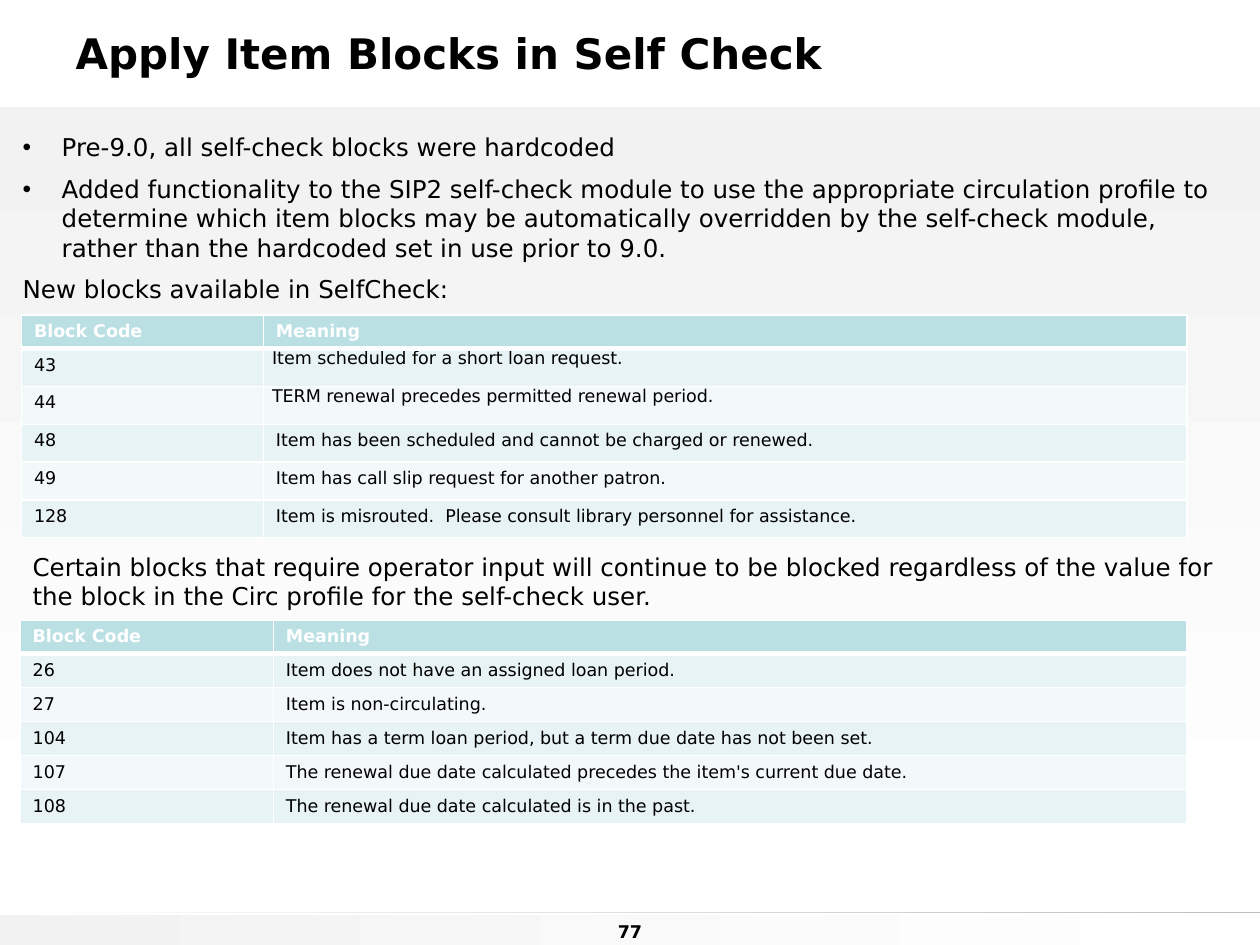
"""Build the slide on item blocks in self check, with two block code tables."""
import pptx
import pptx.dml.color
import pptx.enum.shapes
import pptx.enum.text
import pptx.oxml
import pptx.oxml.ns
import pptx.oxml.xmlchemy
import pptx.util

Inches, Pt = pptx.util.Inches, pptx.util.Pt
MSO_ANCHOR = pptx.enum.text.MSO_ANCHOR
PP_ALIGN = pptx.enum.text.PP_ALIGN
W, H = Inches(10), Inches(7.5)


def rgb(value):
    return pptx.dml.color.RGBColor.from_string(value)


def style(p, size, bold=False, color="000000", before=0):
    p.space_before = Pt(before)
    for r in p.runs:
        r.font.name, r.font.size, r.font.bold = "DejaVu Sans", Pt(size), bold
        r.font.color.rgb = rgb(color)


prs = pptx.Presentation()
prs.slide_width, prs.slide_height = W, H
s = prs.slides.add_slide(prs.slide_layouts[1])
s.background.fill.solid()
s.background.fill.fore_color.rgb = rgb("FFFFFF")
title, body = s.placeholders[0], s.placeholders[1]

bands = [
    (7.26, 0.24, "F2F2F2", 0),
    (0.85, 5.84, "F2F2F2", 270),
    (7.24, 0.01, "BFBFBF", 180),
]
for top, height, color, angle in bands:
    sp = s.shapes.add_shape(pptx.enum.shapes.MSO_SHAPE.RECTANGLE, 0, Inches(top), W, Inches(height))
    sp.shadow.inherit = False
    sp.line.fill.background()
    sp.fill.gradient()
    sp.fill.gradient_angle = angle
    for stop, shade in zip(sp.fill.gradient_stops, (color, "FFFFFF")):
        stop.color.rgb = rgb(shade)
for ph in (title, body):
    s.shapes._spTree.append(ph._element)

title.left, title.top, title.width, title.height = Inches(0.5), Inches(0.13), Inches(9), Inches(0.58)
tf = title.text_frame
tf.text = "Apply Item Blocks in Self Check"
tf.vertical_anchor = MSO_ANCHOR.MIDDLE
tf.auto_size = pptx.enum.text.MSO_AUTO_SIZE.NONE
tf.paragraphs[0].alignment = PP_ALIGN.LEFT
style(tf.paragraphs[0], 24, True)

body.left, body.top, body.width, body.height = Inches(0.08), Inches(1), Inches(9.83), Inches(1.5)
tf = body.text_frame
tf.text = "\n".join([
    "Pre-9.0, all self-check blocks were hardcoded",
    "Added functionality to the SIP2 self-check module to use the appropriate circulation profile to "
    "determine which item blocks may be automatically overridden by the self-check module, "
    "rather than the hardcoded set in use prior to 9.0.",
    "New blocks available in SelfCheck:",
])
tf.auto_size = pptx.enum.text.MSO_AUTO_SIZE.NONE
for i, p in enumerate(tf.paragraphs):
    bullet = i < 2
    pPr = p._p.get_or_add_pPr()
    indent = Inches(0.31) if bullet else 0
    pPr.set("marL", str(indent))
    pPr.set("indent", str(-indent))
    bu = pptx.oxml.xmlchemy.OxmlElement("a:buChar" if bullet else "a:buNone")
    if bullet:
        bu.set("char", "•")
    pPr.append(bu)
    style(p, 14, before=7 if i else 0)

notes = [
    (0.16, 4.33, 9.68, 0.58, 14, False, PP_ALIGN.LEFT, MSO_ANCHOR.TOP,
     "Certain blocks that require operator input will continue to be blocked regardless of the value for "
     "the block in the Circ profile for the self-check user."),
    (4.68, 7.03, 0.64, 0.5, 10, True, PP_ALIGN.CENTER, MSO_ANCHOR.BOTTOM, "77"),
]
for left, top, width, height, size, bold, align, anchor, text in notes:
    tf = s.shapes.add_textbox(Inches(left), Inches(top), Inches(width), Inches(height)).text_frame
    tf.word_wrap = True
    tf.vertical_anchor = anchor
    tf.text = text
    tf.paragraphs[0].alignment = align
    style(tf.paragraphs[0], size, bold)

header = ("Block Code", "Meaning")
tables = [
    (0.17, 2.5, (1.92, 7.33), 0.3, [
        header,
        ("43", "Item scheduled for a short loan request."),
        ("44", "TERM renewal precedes permitted renewal period."),
        ("48", "Item has been scheduled and cannot be charged or renewed."),
        ("49", "Item has call slip request for another patron."),
        ("128", "Item is misrouted.  Please consult library personnel for assistance."),
    ]),
    (0.16, 4.92, (2.01, 7.25), 0.27, [
        header,
        ("26", "Item does not have an assigned loan period."),
        ("27", "Item is non-circulating."),
        ("104", "Item has a term loan period, but a term due date has not been set."),
        ("107", "The renewal due date calculated precedes the item's current due date."),
        ("108", "The renewal due date calculated is in the past."),
    ]),
]
for left, top, widths, row_height, rows in tables:
    heights = [0.26] + [row_height] * (len(rows) - 1)
    table = s.shapes.add_table(len(rows), 2, Inches(left), Inches(top),
                               Inches(sum(widths)), Inches(sum(heights))).table
    table.first_row = table.horz_banding = False
    for col, width in zip(table.columns, widths):
        col.width = Inches(width)
    for i, (row, height, texts) in enumerate(zip(table.rows, heights, rows)):
        row.height = Inches(height)
        fill = "BBE0E3" if i == 0 else ("F3F9FA", "E7F3F4")[i % 2]
        for cell, text in zip(row.cells, texts):
            cell.text = text
            style(cell.text_frame.paragraphs[0], 10, i == 0, "000000" if i else "FFFFFF")
            if text in (rows[1][1], rows[2][1]) and rows[1][0] == "43":
                cell.margin_left = cell.margin_right = Inches(0.07)
                cell.margin_top = cell.margin_bottom = 0
            tcPr = cell._tc.get_or_add_tcPr()
            for side in "LRTB":
                thick = (i, side) in ((0, "B"), (1, "T"))
                tcPr.append(pptx.oxml.parse_xml(
                    f'<a:ln{side} {pptx.oxml.ns.nsdecls("a")} w="{Pt(3 if thick else 1)}">'
                    f'<a:solidFill><a:srgbClr val="FFFFFF"/></a:solidFill></a:ln{side}>'))
            cell.fill.solid()
            cell.fill.fore_color.rgb = rgb(fill)

prs.save("out.pptx")
